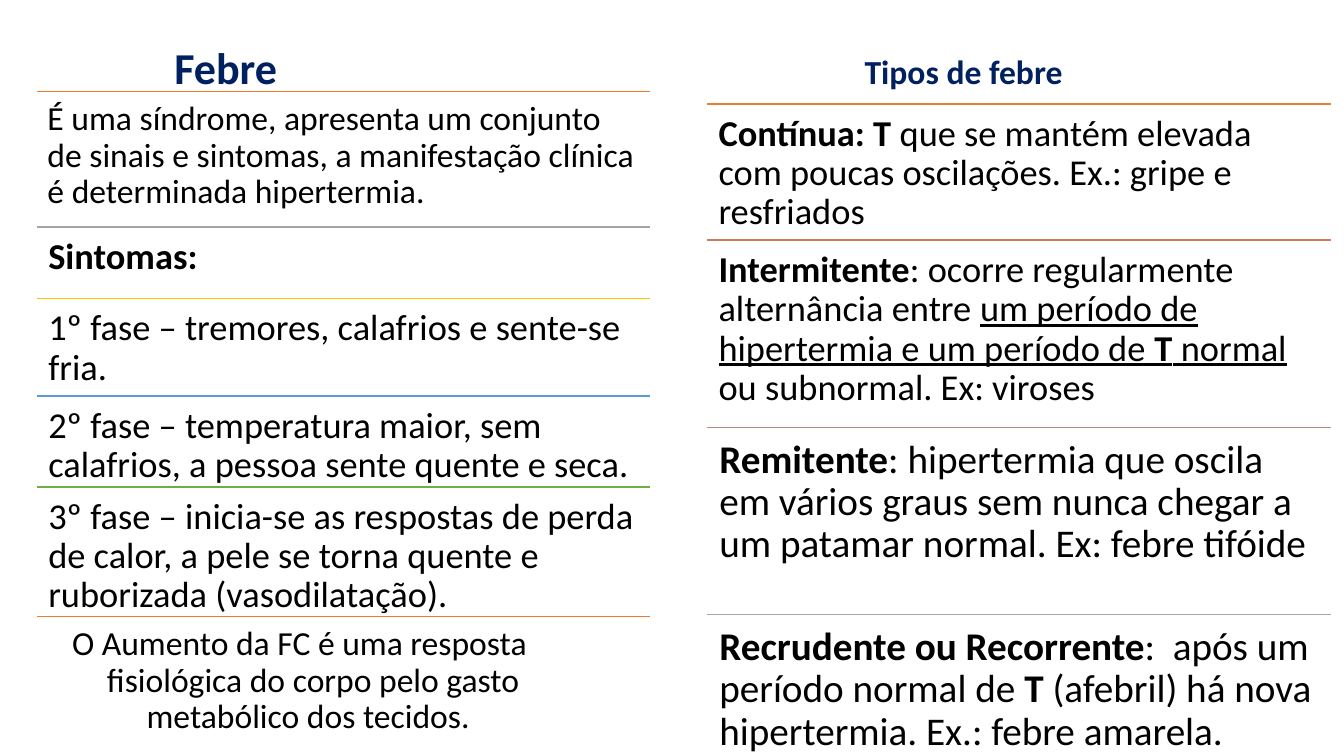
from itertools import pairwise

from lxml import etree
from pptx import Presentation
from pptx import util as u
from pptx.dml.color import RGBColor
from pptx.enum import shapes, text
from pptx.oxml import ns

NAVY = RGBColor(0x00, 0x20, 0x60)
BLACK = RGBColor(0x00, 0x00, 0x00)
ORANGE = RGBColor(0xED, 0x7D, 0x31)
GRAY = RGBColor(0xA5, 0xA5, 0xA5)
YELLOW = RGBColor(0xFF, 0xC0, 0x00)
BLUE = RGBColor(0x5B, 0x9B, 0xD5)
GREEN = RGBColor(0x70, 0xAD, 0x47)
TERRACOTTA = RGBColor(0xD1, 0x7B, 0x5C)
ROSE = RGBColor(0xB9, 0x8A, 0x82)

PLAIN, BOLD, UNDERLINE = "", "b", "u"

# Each section: line colour, text size, paragraphs of (text, style) runs
FEVER = [
    (ORANGE, 24, [[("É uma síndrome, apresenta um conjunto de sinais e sintomas, "
                    "a manifestação clínica é determinada hipertermia.", PLAIN)]]),
    (GRAY, 26, [[("Sintomas:", BOLD)]]),
    (YELLOW, 26, [[("1º fase – tremores, calafrios e sente-se fria.", PLAIN)]]),
    (BLUE, 26, [[("2º fase – temperatura maior, sem calafrios, "
                  "a pessoa sente quente e seca.", PLAIN)]]),
    (GREEN, 26, [[("3º fase – inicia-se as respostas de perda de calor, "
                   "a pele se torna quente e ruborizada (vasodilatação).", PLAIN)]]),
    (ORANGE, 24, [[("O Aumento da FC é uma resposta", PLAIN)],
                  [("fisiológica do corpo pelo gasto", PLAIN)],
                  [("metabólico dos tecidos.", PLAIN)]]),
]
FEVER_TYPES = [
    (ORANGE, 26, [[("Contínua: T ", BOLD),
                   ("que se mantém elevada com poucas oscilações. "
                    "Ex.: gripe e resfriados", PLAIN)]]),
    (TERRACOTTA, 26, [[("Intermitente", BOLD),
                       (": ocorre regularmente alternância entre ", PLAIN),
                       ("um período de hipertermia e um período de ", UNDERLINE),
                       ("T", BOLD + UNDERLINE),
                       (" normal ", UNDERLINE),
                       ("ou subnormal. Ex: viroses", PLAIN)]]),
    (ROSE, 28, [[("Remitente", BOLD),
                 (": hipertermia que oscila em vários graus sem nunca chegar "
                  "a um patamar normal. Ex: febre tifóide", PLAIN)]]),
    (GRAY, 28, [[("Recrudente ou Recorrente", BOLD),
                 (":  após um período normal de ", PLAIN),
                 ("T", BOLD),
                 (" (afebril) há nova hipertermia. Ex.: febre amarela.", PLAIN)]]),
]


class SlideBuilder:
    font_name = "Calibri"
    line_spacing = 0.9
    inset_per_point = 0.0107

    def __init__(self, slide):
        self.slide = slide

    def style(self, font, size, color, bold=False):
        font.name = self.font_name
        font.size = u.Pt(size)
        font.color.rgb = color
        font.bold = bold

    def title(self, wording, left, top, width, height):
        shape = self.slide.shapes.title
        shape.left, shape.top = u.Cm(left), u.Cm(top)
        shape.width, shape.height = u.Cm(width), u.Cm(height)
        frame = shape.text_frame
        frame.text = wording
        frame.auto_size = text.MSO_AUTO_SIZE.NONE
        frame.vertical_anchor = text.MSO_ANCHOR.TOP
        frame.margin_top = 0
        paragraph = frame.paragraphs[0]
        paragraph.alignment = text.PP_ALIGN.LEFT
        paragraph.line_spacing = self.line_spacing
        self.style(paragraph.runs[0].font, 31.5, NAVY, True)

    def heading(self, wording, left, top, width, height):
        shape = self.slide.shapes.add_textbox(*map(u.Cm, (left, top, width, height)))
        frame = shape.text_frame
        frame.text = wording
        frame.word_wrap = False
        frame.auto_size = text.MSO_AUTO_SIZE.SHAPE_TO_FIT_TEXT
        self.style(frame.paragraphs[0].runs[0].font, 24, NAVY, True)

    def rule(self, group, left, top, width, color):
        line = group.shapes.add_connector(
            shapes.MSO_CONNECTOR.STRAIGHT,
            u.Cm(left), u.Cm(top), u.Cm(left + width), u.Cm(top))
        line.line.color.rgb = color
        line.line.width = u.Pt(1)
        etree.SubElement(line._element.spPr, ns.qn("a:effectLst"))

    def body(self, group, box, size, paragraphs, indents):
        frame = group.shapes.add_textbox(*map(u.Cm, box)).text_frame
        frame.word_wrap = True
        inset = u.Cm(size * self.inset_per_point)
        frame.margin_left = frame.margin_right = inset
        frame.margin_top = frame.margin_bottom = inset
        for index, runs in enumerate(paragraphs):
            paragraph = frame.add_paragraph() if index else frame.paragraphs[0]
            paragraph.line_spacing = self.line_spacing
            if len(paragraphs) > 1:
                paragraph._p.get_or_add_pPr().set("marL", str(u.Cm(indents[index])))
            for wording, style in runs:
                run = paragraph.add_run()
                run.text = wording
                self.style(run.font, size, BLACK, BOLD in style)
                run.font.underline = UNDERLINE in style
        
    def column(self, left, width, edges, sections, indents=()):
        """Stack sections between successive edges, each under its coloured rule."""
        group = self.slide.shapes.add_group_shape()
        for (top, bottom), (color, size, paragraphs) in zip(pairwise(edges), sections):
            self.rule(group, left, top, width, color)
            self.body(group, (left, top, width, bottom - top), size, paragraphs, indents)


def main():
    presentation = Presentation()
    presentation.slide_width, presentation.slide_height = u.Cm(33.87), u.Cm(19.05)
    slide = presentation.slides.add_slide(presentation.slide_layouts[5])
    builder = SlideBuilder(slide)
    builder.title("Febre", 4.14, 1.17, 5.79, 2.29)
    builder.column(0.94, 15.44, (2.31, 5.72, 7.52, 9.98, 12.27, 15.54, 19.89),
                   FEVER, indents=(0.62, 1.5, 2.5))
    builder.heading("Tipos de febre", 21.54, 1.17, 5.56, 1.27)
    builder.column(17.83, 15.72, (2.62, 6.05, 10.77, 15.49, 20.22), FEVER_TYPES)
    presentation.save("out.pptx")


if __name__ == "__main__":
    main()
